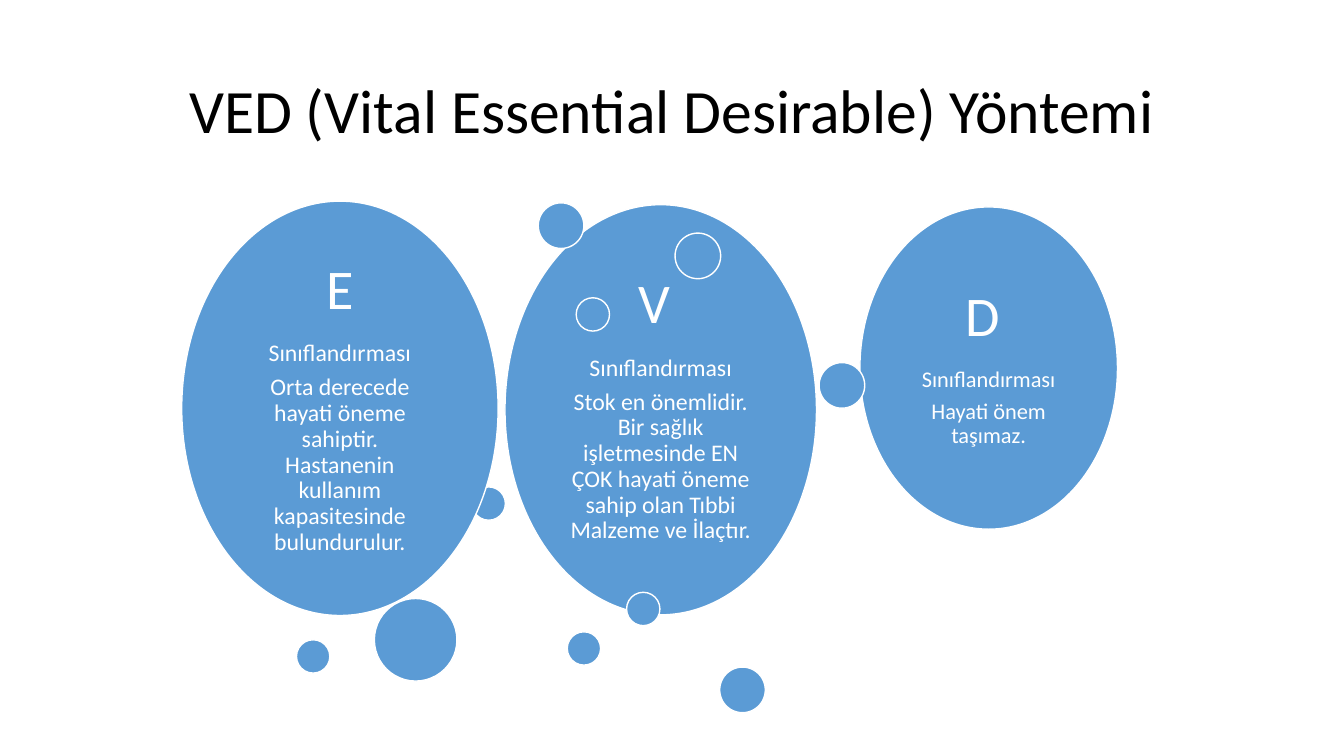
from pptx import Presentation
from pptx.dml.color import RGBColor
from pptx.enum import shapes, text
from pptx.util import Pt

TITLE = "VED (Vital Essential Desirable) Yöntemi"
FONT = "Calibri"
COLORS = {"title": "000000", "circle": "5B9BD5", "outline": "FFFFFF", "label": "FFFFFF"}
SMALL, MEDIUM, LARGE = 23.8, 32.6, 59

GROUPS = [
    {
        "frame": (360.7, 146.2, 222.5, 293),
        "letter": "V ",
        "body": "Stok en önemlidir. Bir sağlık işletmesinde EN ÇOK hayati öneme "
                "sahip olan Tıbbi Malzeme ve İlaçtır.",
        "size": 17,
        "bubbles": [(482.2, 166.5, MEDIUM), (405.2, 451.3, SMALL), (514.1, 476.5, MEDIUM),
                    (411.6, 212.7, SMALL), (337.2, 347.8, SMALL)],
    },
    {
        "frame": (129.8, 143.7, 226, 296),
        "letter": "E",
        "body": "Orta derecede hayati öneme sahiptir. Hastanenin kullanım "
                "kapasitesinde bulundurulur.",
        "size": 17,
        "bubbles": [(384.5, 144.9, MEDIUM), (267.4, 427.5, LARGE)],
    },
    {
        "frame": (614.2, 147.8, 184, 230.2),
        "letter": "D ",
        "body": "Hayati önem taşımaz.",
        "size": 16,
        "bubbles": [(585.1, 259, MEDIUM), (211.8, 457, SMALL), (447.6, 423.1, SMALL)],
    },
]


def color(name):
    return RGBColor.from_string(COLORS[name])


def format_paragraph(para, size, tint):
    para.alignment = text.PP_ALIGN.CENTER
    para.line_spacing = 0.9
    for span in para.runs:
        span.font.name = FONT
        span.font.size = Pt(size)
        span.font.color.rgb = color(tint)


def add_circle(page, left, top, width, height):
    circle = page.shapes.add_shape(
        shapes.MSO_SHAPE.OVAL, Pt(left), Pt(top), Pt(width), Pt(height))
    circle.shadow.inherit = False
    circle.fill.solid()
    circle.fill.fore_color.rgb = color("circle")
    circle.line.color.rgb = color("outline")
    circle.line.width = Pt(1)
    return circle


def add_title(page):
    box = page.shapes.add_textbox(Pt(66), Pt(28.75), Pt(828), Pt(104.4))
    frame = box.text_frame
    frame.word_wrap = True
    frame.vertical_anchor = text.MSO_ANCHOR.MIDDLE
    frame.text = TITLE
    format_paragraph(frame.paragraphs[0], 44, "title")


def add_group(page, group):
    frame = add_circle(page, *group["frame"]).text_frame
    frame.word_wrap = True
    frame.vertical_anchor = text.MSO_ANCHOR.MIDDLE
    frame.margin_left = frame.margin_right = Pt(12)
    frame.margin_top = frame.margin_bottom = Pt(12)
    frame.text = "\n".join([group["letter"], "Sınıflandırması", group["body"]])
    for para, size in zip(frame.paragraphs, (40, group["size"], group["size"])):
        format_paragraph(para, size, "label")
        para.space_after = Pt(round(size * 0.35, 1))
    for left, top, size in group["bubbles"]:
        add_circle(page, left, top, size, size)


def main():
    deck = Presentation()
    deck.slide_width, deck.slide_height = Pt(960), Pt(540)
    page = deck.slides.add_slide(deck.slide_layouts[6])
    add_title(page)
    for group in GROUPS:
        add_group(page, group)
    deck.save("out.pptx")


if __name__ == "__main__":
    main()
